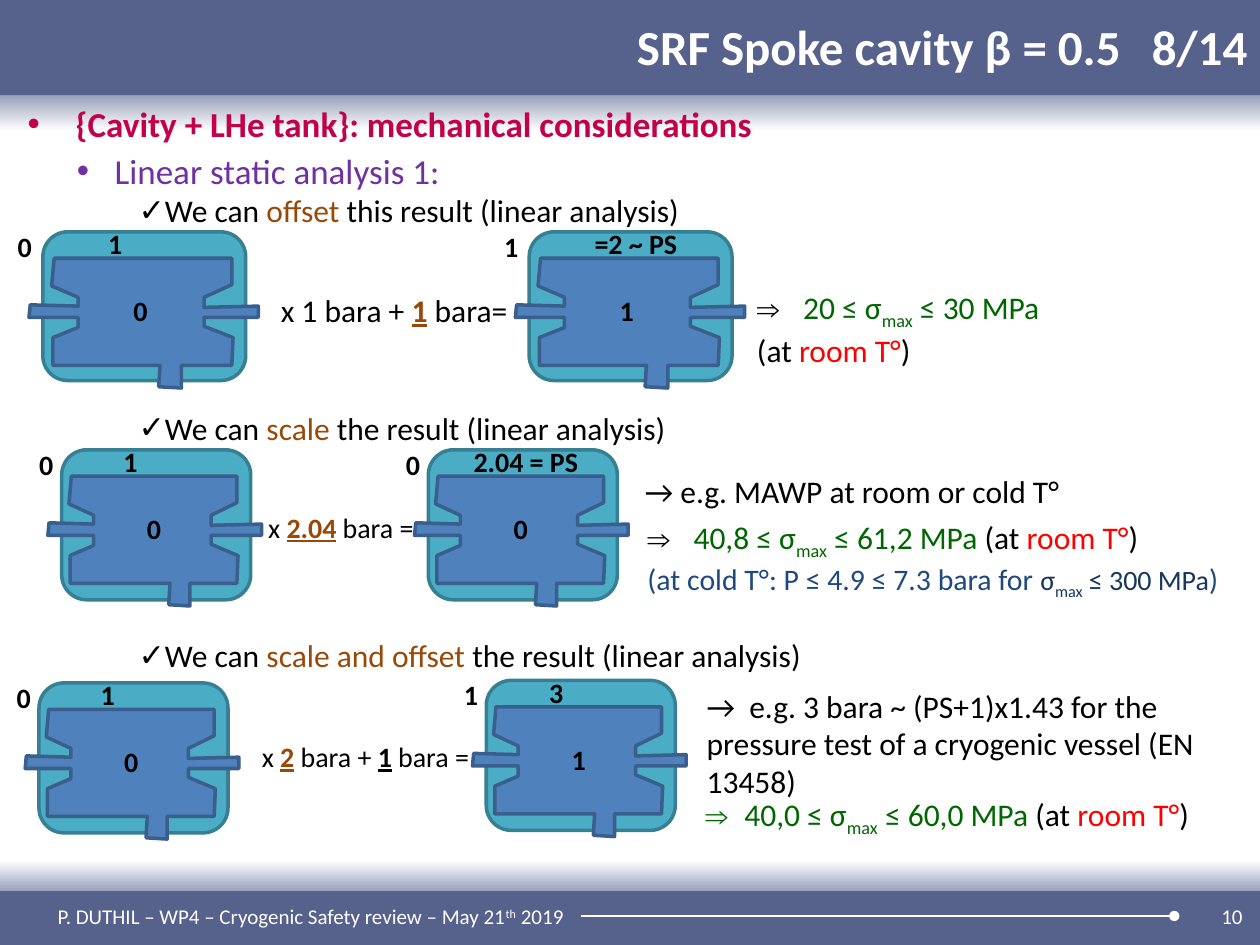
from lxml import etree
from pptx import Presentation
from pptx.dml.color import RGBColor
from pptx.enum.shapes import MSO_CONNECTOR, MSO_SHAPE
from pptx.enum.text import MSO_ANCHOR, MSO_AUTO_SIZE, PP_ALIGN
from pptx.oxml.ns import qn
from pptx.util import Inches, Pt

RECT, ROUND_RECT = MSO_SHAPE.RECTANGLE, MSO_SHAPE.ROUNDED_RECTANGLE
MIDDLE, TOP = MSO_ANCHOR.MIDDLE, MSO_ANCHOR.TOP
LEFT, RIGHT = PP_ALIGN.LEFT, PP_ALIGN.RIGHT
NO_FIT = MSO_AUTO_SIZE.NONE
STRAIGHT = MSO_CONNECTOR.STRAIGHT

FONT = "Calibri"
BLACK, WHITE = RGBColor(0, 0, 0), RGBColor(0xFF, 0xFF, 0xFF)
BAND, FADE = RGBColor(0x56, 0x62, 0x8C), RGBColor(0x9A, 0xA2, 0xBC)
CRIMSON, PURPLE = RGBColor(0xC3, 0x00, 0x4A), RGBColor(0x70, 0x30, 0xA0)
BROWN, RED, GREEN = RGBColor(0x98, 0x48, 0x07), RGBColor(0xFF, 0, 0), RGBColor(0, 0x66, 0)
BLUE, NAVY = RGBColor(0x1F, 0x49, 0x7D), RGBColor(0x17, 0x37, 0x5E)
TANK, TANK_LINE = RGBColor(0x4B, 0xAC, 0xC6), RGBColor(0x37, 0x7F, 0x92)
CAVITY, CAVITY_LINE = RGBColor(0x4F, 0x81, 0xBD), RGBColor(0x3A, 0x5F, 0x8C)

KEY = {"color": BROWN, "bold": True, "underline": True}
STRONG = {"bold": True, "underline": True}
LIMIT = {"color": GREEN}
SUB = {"color": GREEN, "baseline": -25000}
HOT = {"color": RED}
COLD = {"color": BLUE, "size": 17}
COLD_SIGMA = {"color": NAVY, "size": 16}
ROOM = [(" (at ", {}), ("room T°", HOT), (")", {})]
ARROW = ("⇒", 0.31, 0.31)


def check(word, tail):
    return [("We can ", {}), (word, {"color": BROWN}), (tail, {})]


def stress(low, high):
    return [(low + " ≤ σ", LIMIT), ("max", SUB), (f" ≤ {high} MPa", LIMIT)]


TITLE = "SRF Spoke cavity β = 0.5\t 8/14"
TICK = ("✓", 1.08, 0.2)
OUTLINE = [
    ([("{Cavity + LHe tank}: mechanical considerations", {"color": CRIMSON, "size": 20, "bold": True})],
     0, ("•", 0.38, 0.38), 0),
    ([("Linear static analysis 1:", {"color": PURPLE, "size": 20})], 1, ("•", 0.69, 0.3), 3),
    (check("offset", " this result (linear analysis)"), 2, TICK, 0),
    (check("scale", " the result (linear analysis)"), 2, TICK, 102.5),
    (check("scale and offset", " the result (linear analysis)"), 2, TICK, 108.5),
]

# (tank left, top, width, height), inside, outside, tank label, tank label offset
CAVITIES = [
    ((0.34, 1.84, 1.61, 1.18), "0", "0", "1", 0.42),
    ((4.2, 1.84, 1.61, 1.18), "1", "1", "=2 ~ PS", 0.42),
    ((0.49, 3.57, 1.5, 1.19), "0", "0", "1", 0.39),
    ((3.4, 3.57, 1.5, 1.19), "0", "0", "2.04 = PS", 0.26),
    ((0.31, 5.42, 1.5, 1.19), "0", "0", "1", 0.39),
    ((3.86, 5.4, 1.5, 1.19), "1", "1", "3", 0.4),
]
CAVITY_POINTS = [
    (0.01, 0.37), (0.39, 0.38), (0.39, 0.31), (0.18, 0.22), (0.2, 0), (1.61, 0),
    (1.61, 0.21), (1.39, 0.31), (1.39, 0.39), (1.82, 0.38), (1.82, 0.47), (1.39, 0.47),
    (1.39, 0.54), (1.62, 0.63), (1.61, 0.85), (1.21, 0.85), (1.21, 1.03), (1.03, 1.02),
    (1.04, 0.85), (0.19, 0.85), (0.19, 0.63), (0.39, 0.55), (0.39, 0.47), (0, 0.47),
]

TEXTS = [
    ((2.13, 2.26, 2.08, 0.4), 18, [([("x 1 bara + ", {}), ("1", KEY), (" bara=", {})], None)]),
    ((2.03, 4, 1.43, 0.37), 16, [([("x ", {}), ("2.04", KEY), (" bara =", {})], None)]),
    ((1.98, 5.82, 1.96, 0.37), 16,
     [([("x ", {}), ("2", KEY), (" bara + ", {}), ("1", STRONG), (" bara =", {})], None)]),
    ((5.91, 2.24, 3.74, 0.71), 18,
     [([(" ", {})] + stress("20", "30"), ARROW),
      ([("(at ", {}), ("room T°", HOT), (")", {})], None)]),
    ((5.02, 3.7, 3.56, 0.4), 18, [([("→ e.g. MAWP at room or cold T°", {})], None)]),
    ((5.04, 4.06, 4.84, 0.69), 18,
     [([(" ", {})] + stress("40,8", "61,2") + ROOM, ARROW),
      ([("(at cold T°: P ≤ 4.9 ≤ 7.3 bara for ", COLD), ("σ", COLD_SIGMA),
        ("max", {**COLD_SIGMA, "baseline": -25000}), (" ≤ 300 MPa", COLD_SIGMA), (")", COLD)], None)]),
    ((5.51, 5.4, 4.45, 1.01), 18,
     [([("→  e.g. 3 bara ~ (PS+1)x1.43 for the pressure test of a cryogenic vessel (EN 13458)", {})], None)]),
    ((5.5, 6.26, 4.13, 0.4), 18, [(stress("40,0", "60,0") + ROOM, ARROW)]),
]
FOOTER = [("P. DUTHIL – WP4 – Cryogenic Safety review – May 21", {"color": WHITE}),
          ("th", {"color": WHITE, "baseline": 30000}), (" 2019", {"color": WHITE})]


def place(shape, box):
    shape.left, shape.top, shape.width, shape.height = map(Inches, box)


def add_bullet(p, char, margin, hanging):
    pPr = p._p.get_or_add_pPr()
    pPr.set("marL", str(Inches(margin)))
    pPr.set("indent", str(-Inches(hanging)))
    etree.SubElement(pPr, qn("a:buFont")).set("typeface", "Arial")
    etree.SubElement(pPr, qn("a:buChar")).set("char", char)


def add_runs(p, runs, size):
    for text, style in runs:
        r = p.add_run()
        r.text = text
        r.font.name = FONT
        r.font.size = Pt(style.get("size", size))
        r.font.bold = style.get("bold", False)
        r.font.underline = style.get("underline", False)
        r.font.color.rgb = style.get("color", BLACK)
        if "baseline" in style:
            r._r.get_or_add_rPr().set("baseline", str(style["baseline"]))


def add_text(s, box, size, paragraphs, anchor=TOP, align=LEFT):
    tf = s.shapes.add_textbox(*map(Inches, box)).text_frame
    tf.word_wrap = True
    tf.vertical_anchor = anchor
    for i, (runs, bullet) in enumerate(paragraphs):
        p = tf.add_paragraph() if i else tf.paragraphs[0]
        p.alignment = align
        if bullet:
            add_bullet(p, *bullet)
        add_runs(p, runs, size)


def paint(shape, fill, line=None):
    shape.shadow.inherit = False
    shape.fill.solid()
    shape.fill.fore_color.rgb = fill
    if line is None:
        shape.line.fill.background()
    else:
        shape.line.color.rgb = line
        shape.line.width = Pt(2)


def add_band(s, top, height):
    band = s.shapes.add_shape(RECT, 0, Inches(top), Inches(10), Inches(height))
    paint(band, BAND)
    return band


def add_fade(s, top, height, angle):
    fill = add_band(s, top, height).fill
    fill.gradient()
    fill.gradient_angle = angle
    for stop, color in zip(fill.gradient_stops, (FADE, WHITE)):
        stop.color.rgb = color


def add_cavity(s, tank, inside, outside, label, offset):
    x, y, w, h = tank
    paint(s.shapes.add_shape(ROUND_RECT, *map(Inches, tank)), TANK, TANK_LINE)
    points = [(Inches(x - 0.11 + px * w / 1.61), Inches(y + 0.21 + py)) for px, py in CAVITY_POINTS]
    builder = s.shapes.build_freeform(*points[0])
    builder.add_line_segments(points[1:], close=True)
    paint(builder.convert_to_shape(), CAVITY, CAVITY_LINE)
    for text, dx, dy, width in ((inside, 0.385 * w, 0.44, 0.29), (outside, -0.185 * w, -0.07, 0.29),
                                (label, offset, -0.09, 1.21 if len(label) > 1 else 0.29)):
        add_text(s, (x + dx, y + dy, width, 0.35), 16, [([(text, {"bold": True})], None)])


def add_footer_line(s):
    line = s.shapes.add_connector(STRAIGHT, Inches(4.61), Inches(7.27), Inches(9.32), Inches(7.27))
    line.line.color.rgb = WHITE
    line.line.width = Pt(1.5)
    spPr = line._element.spPr
    etree.SubElement(spPr.find(qn("a:ln")), qn("a:tailEnd")).set("type", "oval")
    etree.SubElement(spPr, qn("a:effectLst"))


def main():
    prs = Presentation()
    prs.slide_width, prs.slide_height = Inches(10), Inches(7.5)
    s = prs.slides.add_slide(prs.slide_layouts[1])
    title, body = s.placeholders
    tree = s.shapes._spTree
    add_band(s, 0, 0.76)
    add_band(s, 7.07, 0.43)
    add_fade(s, 0.76, 0.28, 270)
    add_fade(s, 6.83, 0.24, 90)
    add_footer_line(s)
    tree.append(title._element)
    tree.append(body._element)

    place(title, (1.06, -0.03, 8.94, 0.79))
    tf = title.text_frame
    tf.auto_size = NO_FIT
    tf.vertical_anchor = MIDDLE
    tf.paragraphs[0].alignment = RIGHT
    add_runs(tf.paragraphs[0], [(TITLE, {"color": WHITE, "bold": True})], 28)

    place(body, (0.2, 0.76, 9.8, 6.32))
    tf = body.text_frame
    tf.auto_size = NO_FIT
    tf.margin_left = tf.margin_right = tf.margin_bottom = Inches(0.02)
    tf.margin_top = Inches(0.05)
    for i, (runs, level, bullet, before) in enumerate(OUTLINE):
        p = tf.add_paragraph() if i else tf.paragraphs[0]
        p.level = level
        add_bullet(p, *bullet)
        p.space_before = Pt(before)
        add_runs(p, runs, 18)

    for cavity in CAVITIES:
        add_cavity(s, *cavity)
    for text in TEXTS:
        add_text(s, *text)
    add_text(s, (0.36, 7.07, 4.24, 0.4), 12, [(FOOTER, None)], MIDDLE)
    add_text(s, (7.63, 7.07, 2.33, 0.4), 12, [([("10", {"color": WHITE})], None)], MIDDLE, RIGHT)
    prs.save("out.pptx")


if __name__ == "__main__":
    main()
